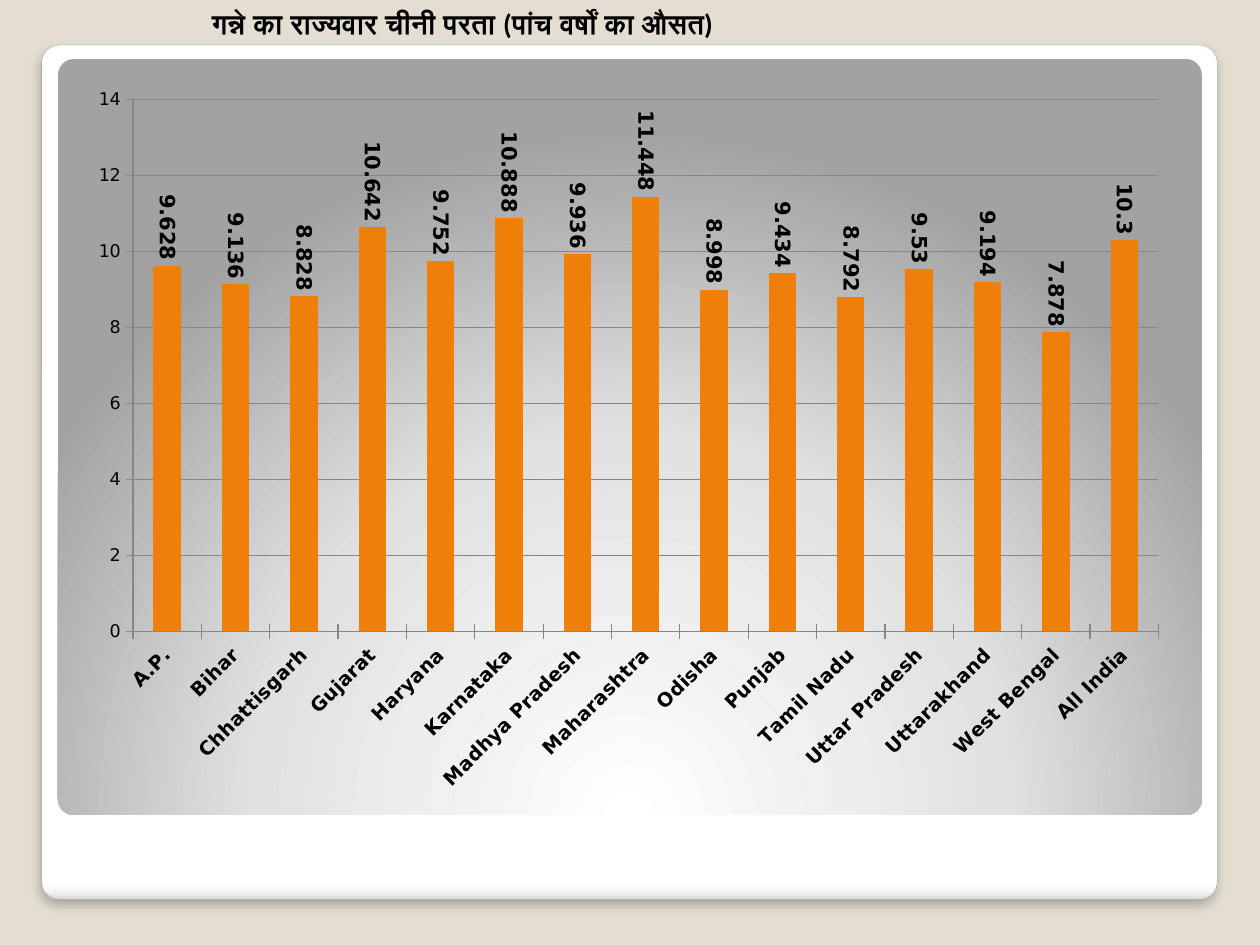
"""Build a slide charting average sugar recovery from cane by Indian state."""
from dataclasses import dataclass
from typing import Optional

from lxml.etree import SubElement
from pptx import Presentation
from pptx.chart.data import CategoryChartData
from pptx.dml.color import RGBColor
from pptx.enum.chart import XL_CHART_TYPE, XL_LABEL_POSITION, XL_TICK_MARK
from pptx.enum.shapes import MSO_SHAPE
from pptx.enum.text import MSO_ANCHOR, MSO_AUTO_SIZE, PP_ALIGN
from pptx.oxml import parse_xml
from pptx.oxml.ns import nsdecls, qn
from pptx.util import Cm, Pt


@dataclass(frozen=True)
class Theme:
    """Colours, fonts and type sizes of the slide."""

    background: str = "E3DED1"
    text: str = "000000"
    bar: str = "F07F09"
    rule: str = "868686"
    title_font: str = "Calibri"
    chart_font: str = "DejaVu Sans"
    title_size: int = 16
    chart_size: int = 10
    category_size: int = 11
    value_size: int = 12


@dataclass(frozen=True)
class Panel:
    """A rounded panel in centimetres, with its gradient."""

    left: float
    top: float
    width: float
    height: float
    stops: tuple[tuple[int, str], ...]
    direction: str
    border: Optional[str] = None
    shadow: Optional[str] = None


THEME = Theme()
TITLE = "गन्ने का राज्यवार चीनी परता (पांच वर्षों का औसत)"
RECOVERY = {
    "A.P.": 9.628,
    "Bihar": 9.136,
    "Chhattisgarh": 8.828,
    "Gujarat": 10.642,
    "Haryana": 9.752,
    "Karnataka": 10.888,
    "Madhya Pradesh": 9.936,
    "Maharashtra": 11.448,
    "Odisha": 8.998,
    "Punjab": 9.434,
    "Tamil Nadu": 8.792,
    "Uttar Pradesh": 9.53,
    "Uttarakhand": 9.194,
    "West Bengal": 7.878,
    "All India": 10.3,
}
PANELS = (
    Panel(0.84, 0.91, 23.7, 17.22,
          ((0, "FFFFFF"), (98, "FFFFFF"), (99, "F7F7F7"), (100, "DADADA")),
          '<a:lin ang="5400000" scaled="0"/>', border="A4A4A4",
          shadow='<a:outerShdw {ns} blurRad="76200" dist="50800" dir="5400000" algn="tl" '
                 'rotWithShape="0"><a:srgbClr val="000000"><a:alpha val="25000"/>'
                 '</a:srgbClr></a:outerShdw>'),
    Panel(1.17, 1.19, 23.06, 15.24,
          ((0, "FFFFFF"), (55, "E1E1E1"), (100, "A2A2A2")),
          '<a:path path="circle"><a:fillToRect l="50000" t="175000" r="50000" b="-75000"/></a:path>'),
)


def rgb(value: str) -> RGBColor:
    """Turn a hex string into a colour."""
    return RGBColor.from_string(value)


def set_font(font, size: int, name: str, bold: bool = False) -> None:
    """Apply the theme's text colour with a size, typeface and weight."""
    font.size, font.name, font.bold = Pt(size), name, bold
    font.color.rgb = rgb(THEME.text)


def draw_panel(slide, panel: Panel) -> None:
    """Draw one rounded gradient panel."""
    box = slide.shapes.add_shape(MSO_SHAPE.ROUNDED_RECTANGLE, Cm(panel.left), Cm(panel.top),
                                 Cm(panel.width), Cm(panel.height))
    box.adjustments[0] = 0.021
    box.fill.background()
    if panel.border:
        box.line.color.rgb = rgb(panel.border)
        box.line.width = Pt(0.16)
    else:
        box.line.fill.background()
    box.shadow.inherit = False
    properties = box._element.spPr
    stops = "".join(f'<a:gs pos="{position * 1000}"><a:srgbClr val="{color}"/></a:gs>'
                    for position, color in panel.stops)
    gradient = parse_xml(f'<a:gradFill {nsdecls("a")} rotWithShape="1"><a:gsLst>{stops}</a:gsLst>'
                         f'{panel.direction}</a:gradFill>')
    properties.replace(properties.find(qn("a:noFill")), gradient)
    if panel.shadow:
        effects = properties.find(qn("a:effectLst"))
        effects.append(parse_xml(panel.shadow.format(ns=nsdecls("a"))))


def place_title(slide) -> None:
    """Position and format the title in front of the panels."""
    title = slide.shapes.title
    title.left, title.top, title.width, title.height = Cm(2.97), Cm(0), Cm(12.7), Cm(0.94)
    frame = title.text_frame
    frame.text = TITLE
    frame.word_wrap = False
    frame.auto_size = MSO_AUTO_SIZE.SHAPE_TO_FIT_TEXT
    frame.vertical_anchor = MSO_ANCHOR.MIDDLE
    heading = frame.paragraphs[0]
    heading.alignment = PP_ALIGN.CENTER
    set_font(heading.font, THEME.title_size, THEME.title_font, bold=True)
    slide.shapes._spTree.append(title._element)


def rotate_text(element, degrees: int) -> None:
    """Turn the text of an axis or of data labels."""
    body = element.find(qn("c:txPr")).find(qn("a:bodyPr"))
    body.set("rot", str(degrees * 60000))
    body.set("vert", "horz")


def fix_plot_area(chart, **fractions: float) -> None:
    """Set the inner plot area as fractions of the chart."""
    area = chart._chartSpace.chart.plotArea
    layout = area.find(qn("c:layout"))
    if layout is None:
        layout = parse_xml(f'<c:layout {nsdecls("c")}/>')
        area.insert(0, layout)
    manual = SubElement(layout, qn("c:manualLayout"))
    settings = {"layoutTarget": "inner", "xMode": "edge", "yMode": "edge", **fractions}
    for tag, value in settings.items():
        SubElement(manual, qn(f"c:{tag}")).set("val", str(value))


def draw_chart(slide) -> None:
    """Draw the column chart of sugar recovery."""
    data = CategoryChartData()
    data.categories = list(RECOVERY)
    data.add_series("Series 1", list(RECOVERY.values()))
    chart = slide.shapes.add_chart(XL_CHART_TYPE.COLUMN_CLUSTERED, Cm(1.57), Cm(1.57),
                                   Cm(22.23), Cm(14.68), data).chart
    chart.has_legend = chart.has_title = False
    set_font(chart.font, THEME.chart_size, THEME.chart_font)
    fix_plot_area(chart, x=0.05, y=0.03, w=0.93, h=0.73)

    states, scale = chart.category_axis, chart.value_axis
    for axis in (states, scale):
        axis.major_tick_mark = XL_TICK_MARK.CROSS
        axis.minor_tick_mark = XL_TICK_MARK.NONE
        axis.format.line.color.rgb = rgb(THEME.rule)
    set_font(states.tick_labels.font, THEME.category_size, THEME.chart_font, bold=True)
    rotate_text(states._element, -45)
    scale.minimum_scale, scale.maximum_scale, scale.major_unit = 0, 14, 2
    scale.has_major_gridlines = True
    scale.major_gridlines.format.line.color.rgb = rgb(THEME.rule)

    columns = chart.plots[0]
    columns.vary_by_categories = False
    columns.gap_width, columns.overlap = 150, 28
    recovery = columns.series[0]
    recovery.format.fill.solid()
    recovery.format.fill.fore_color.rgb = rgb(THEME.bar)
    labels = recovery.data_labels
    labels.show_value = True
    labels.position = XL_LABEL_POSITION.OUTSIDE_END
    set_font(labels.font, THEME.value_size, THEME.chart_font, bold=True)
    rotate_text(labels._element, 90)


def main() -> None:
    """Assemble and save the slide."""
    deck = Presentation()
    deck.slide_width, deck.slide_height = Cm(25.4), Cm(19.05)
    slide = deck.slides.add_slide(deck.slide_layouts[5])
    slide.background.fill.solid()
    slide.background.fill.fore_color.rgb = rgb(THEME.background)
    for panel in PANELS:
        draw_panel(slide, panel)
    place_title(slide)
    draw_chart(slide)
    deck.save("out.pptx")


if __name__ == "__main__":
    main()
